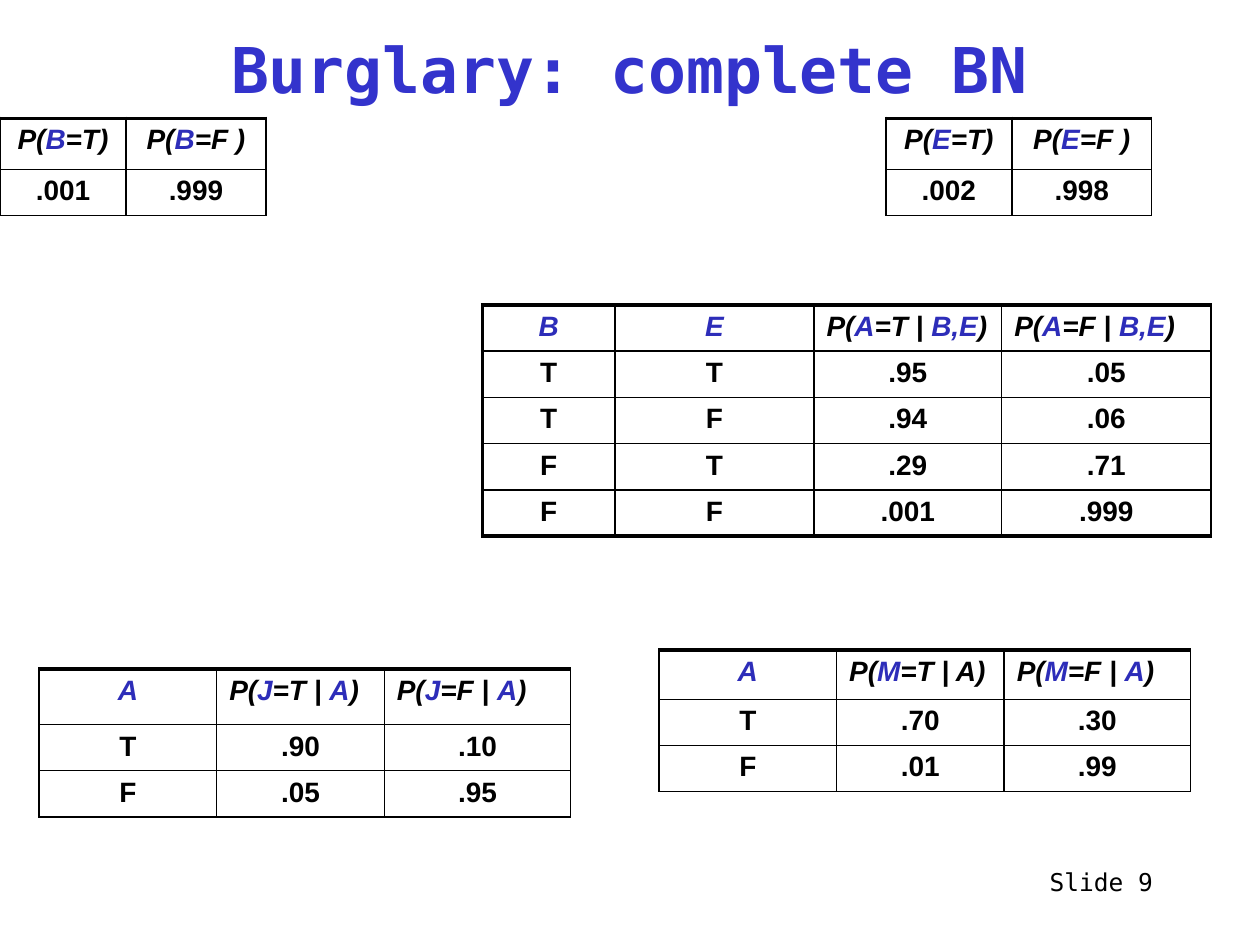
from dataclasses import dataclass

from lxml import etree
from pptx import Presentation
from pptx.dml.color import RGBColor
from pptx.enum.text import MSO_ANCHOR, PP_ALIGN
from pptx.oxml.ns import qn
from pptx.util import Inches, Pt

LEFT, CENTER, RIGHT = PP_ALIGN.LEFT, PP_ALIGN.CENTER, PP_ALIGN.RIGHT
MIDDLE = MSO_ANCHOR.MIDDLE
TITLE_ONLY = 5


@dataclass(frozen=True)
class Theme:
    ink: RGBColor = RGBColor(0x00, 0x00, 0x00)
    paper: RGBColor = RGBColor(0xFF, 0xFF, 0xFF)
    heading: RGBColor = RGBColor(0x33, 0x33, 0xCC)
    variable: RGBColor = RGBColor(0x2D, 0x2D, 0xB9)
    slide_font: str = "DejaVu Sans Mono"
    table_font: str = "Arial"
    title_size: float = 36
    table_size: float = 16
    number_size: float = 14
    thin: float = 1
    thick: float = 2.25


THEME = Theme()
WIDTH, HEIGHT = Inches(10), Inches(7.5)
ROW = 4.67
PRIOR_COLUMNS = (10, 11.1)
CHILD_COLUMNS = (14.1, 13.3, 14.8)


def across(percent):
    return round(WIDTH * percent / 100)


def down(percent):
    return round(HEIGHT * percent / 100)


def set_font(font, family, size, color, bold=False):
    font.name, font.size, font.bold = family, Pt(size), bold
    font.color.rgb = color


def add_title(slide, box, wording):
    title = slide.shapes.title
    title.left, title.top, title.width, title.height = box
    title.text_frame.text = wording
    title.text_frame.vertical_anchor = MIDDLE
    heading = title.text_frame.paragraphs[0]
    heading.alignment = CENTER
    set_font(heading.font, THEME.slide_font, THEME.title_size, THEME.heading, True)


def add_slide_number(slide, box, wording):
    frame = slide.shapes.add_textbox(*box).text_frame
    frame.word_wrap = True
    frame.text = wording
    number = frame.paragraphs[0]
    number.alignment = RIGHT
    set_font(number.font, THEME.slide_font, THEME.number_size, THEME.ink)


def draw_borders(cell, thick_sides):
    properties = cell._tc.get_or_add_tcPr()
    for side in "LRTB":
        weight = THEME.thick if side in thick_sides else THEME.thin
        border = etree.SubElement(properties, qn(f"a:ln{side}"), w=str(Pt(weight)))
        fill = etree.SubElement(border, qn("a:solidFill"))
        etree.SubElement(fill, qn("a:srgbClr"), val=str(THEME.ink))


def write_cell(cell, wording, is_header):
    paragraph = cell.text_frame.paragraphs[0]
    paragraph.alignment = LEFT if " | " in wording else CENTER
    set_font(paragraph.font, THEME.table_font, THEME.table_size, THEME.ink, True)
    paragraph.font.italic = is_header
    for index, part in enumerate(wording.split("*")):
        if part:
            run = paragraph.add_run()
            run.text = part
            if index % 2:
                run.font.color.rgb = THEME.variable


def add_probabilities(slide, corner, columns, header_height, rows, thick_edges="T"):
    heights = [header_height] + [ROW] * (len(rows) - 1)
    left, top = corner
    table = slide.shapes.add_table(
        len(rows), len(columns), across(left), down(top),
        across(sum(columns)), down(sum(heights))).table
    table.first_row = table.horz_banding = False
    for column, width in zip(table.columns, columns):
        column.width = across(width)
    for r, (values, height) in enumerate(zip(rows, heights)):
        table.rows[r].height = down(height)
        for c, wording in enumerate(values):
            cell = table.cell(r, c)
            edges = {"L": c == 0, "T": r == 0, "B": r == len(rows) - 1}
            draw_borders(cell, [side for side in thick_edges if edges[side]])
            cell.fill.solid()
            cell.fill.fore_color.rgb = THEME.paper
            write_cell(cell, wording, r == 0)


def add_prior(slide, corner, event, values):
    headers = (f"P(*{event}*=T)", f"P(*{event}*=F )")
    add_probabilities(slide, corner, PRIOR_COLUMNS, 5.4, [headers, values])


def add_alarm(slide, corner):
    rows = [
        ("*B*", "*E*", "P(*A*=T | *B,E*)", "P(*A*=F | *B,E*)"),
        ("T", "T", ".95", ".05"),
        ("T", "F", ".94", ".06"),
        ("F", "T", ".29", ".71"),
        ("F", "F", ".001", ".999"),
    ]
    add_probabilities(slide, corner, (10.5, 15.8, 14.9, 16.6), ROW, rows, "LTB")


def add_caller(slide, corner, header_height, headers, if_alarm, if_quiet):
    rows = [("*A*", *headers), ("T", *if_alarm), ("F", *if_quiet)]
    add_probabilities(slide, corner, CHILD_COLUMNS, header_height, rows)


def main():
    deck = Presentation()
    deck.slide_width, deck.slide_height = WIDTH, HEIGHT
    slide = deck.slides.add_slide(deck.slide_layouts[TITLE_ONLY])
    add_title(slide, (across(3.3), down(2.27), across(93.3), down(10)),
              "Burglary: complete BN")
    add_slide_number(slide, (across(71.7), down(91.1), across(20.8), down(6.67)),
                     "Slide 9")
    add_alarm(slide, (38.3, 32.27))
    add_prior(slide, (0, 12.53), "B", (".001", ".999"))
    add_prior(slide, (70.3, 12.53), "E", (".002", ".998"))
    add_caller(slide, (3.1, 70.8), 5.87, ("P(*J*=T | *A*)", "P(*J*=F | *A*)"),
               (".90", ".10"), (".05", ".95"))
    add_caller(slide, (52.3, 68.8), 5.2, ("P(*M*=T | A)", "P(*M*=F | *A*)"),
               (".70", ".30"), (".01", ".99"))
    deck.save("out.pptx")


if __name__ == "__main__":
    main()
